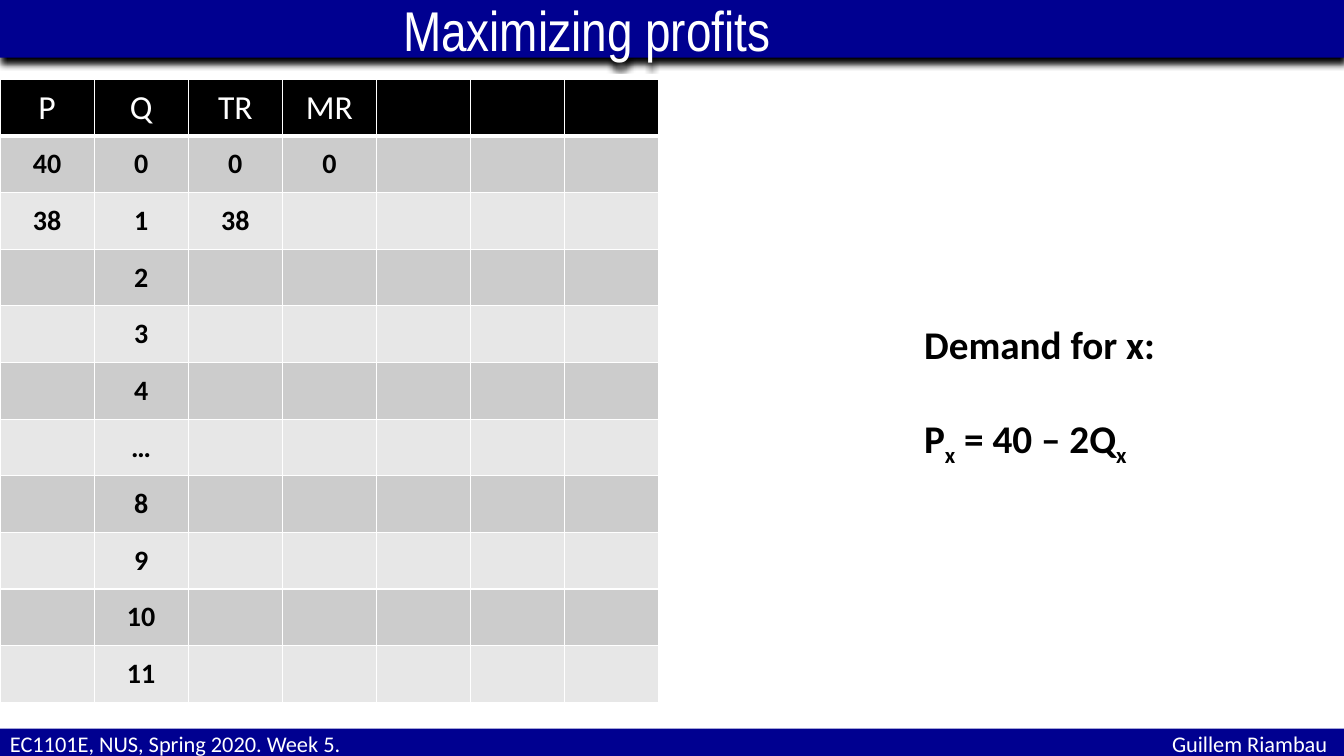
import pptx
import pptx.dml.color
import pptx.enum.shapes
import pptx.enum.text
import pptx.oxml
import pptx.oxml.ns
import pptx.util
from pptx.util import Cm

NAVY = pptx.dml.color.RGBColor(0x00, 0x00, 0x90)
WHITE = pptx.dml.color.RGBColor(0xFF, 0xFF, 0xFF)
BLACK = pptx.dml.color.RGBColor(0x00, 0x00, 0x00)
DARK_BAND = pptx.dml.color.RGBColor(0xCC, 0xCC, 0xCC)
LIGHT_BAND = pptx.dml.color.RGBColor(0xE7, 0xE7, 0xE7)

SLIDE_WIDTH = Cm(33.87)
HEADERS = ["P", "Q", "TR", "MR", "", "", ""]
QUANTITIES = ["0", "1", "2", "3", "4", "…", "8", "9", "10", "11"]
KNOWN_VALUES = {"0": ("40", "0", "0"), "1": ("38", "38", "")}


def xml_element(markup):
    namespace = pptx.oxml.ns.nsdecls("a")
    return pptx.oxml.parse_xml(markup.replace(">", f" {namespace}>", 1))


def format_font(paragraph, name, size, color, bold=False):
    paragraph.font.name = name
    paragraph.font.size = pptx.util.Pt(size)
    paragraph.font.color.rgb = color
    paragraph.font.bold = bold


def format_bar(shape, top, height, text, font_name, size):
    shape.left, shape.top, shape.width, shape.height = 0, top, SLIDE_WIDTH, height
    shape.fill.solid()
    shape.fill.fore_color.rgb = NAVY
    shape.line.fill.background()
    shape.shadow.inherit = False
    effects = shape._element.spPr.find(pptx.oxml.ns.qn("a:effectLst"))
    effects.append(xml_element(
        '<a:outerShdw blurRad="50800" dist="50800" dir="5400000" rotWithShape="0">'
        '<a:srgbClr val="000000"/></a:outerShdw>'))
    frame = shape.text_frame
    frame.word_wrap = True
    frame.auto_size = pptx.enum.text.MSO_AUTO_SIZE.NONE
    frame.vertical_anchor = pptx.enum.text.MSO_ANCHOR.MIDDLE
    paragraph = frame.paragraphs[0]
    paragraph.text = text
    paragraph.alignment = pptx.enum.text.PP_ALIGN.LEFT
    format_font(paragraph, font_name, size, WHITE)


def add_title(slide):
    title = slide.shapes.title
    format_bar(title, 0, Cm(1.45), "Maximizing profits", "Arial Narrow", 40)
    title.text_frame.margin_left = Cm(10.16)


def add_footer(slide):
    footer = slide.shapes.add_shape(
        pptx.enum.shapes.MSO_SHAPE.RECTANGLE, 0, 0, SLIDE_WIDTH, Cm(0.76))
    format_bar(footer, Cm(18.36), Cm(0.76),
               "EC1101E, NUS, Spring 2020. Week 5.\tGuillem Riambau", "Calibri", 16)
    properties = footer.text_frame.paragraphs[0]._p.get_or_add_pPr()
    tabs = xml_element(f'<a:tabLst><a:tab pos="{Cm(33.2)}" algn="r"/></a:tabLst>')
    properties.insert_element_before(tabs, "a:defRPr", "a:extLst")


def format_cell(cell, text, fill, size, color, bold, bottom_width):
    cell_properties = cell._tc.get_or_add_tcPr()
    for side, width in (("L", 1), ("R", 1), ("T", 1), ("B", bottom_width)):
        cell_properties.append(xml_element(
            f'<a:ln{side} w="{pptx.util.Pt(width)}"><a:solidFill>'
            f'<a:srgbClr val="{WHITE}"/></a:solidFill></a:ln{side}>'))
    cell.fill.solid()
    cell.fill.fore_color.rgb = fill
    cell.vertical_anchor = pptx.enum.text.MSO_ANCHOR.MIDDLE
    paragraph = cell.text_frame.paragraphs[0]
    paragraph.text = text
    paragraph.alignment = pptx.enum.text.PP_ALIGN.CENTER
    format_font(paragraph, "Calibri", size, color, bold)


def add_revenue_table(slide):
    rows = [HEADERS]
    for quantity in QUANTITIES:
        price, total, marginal = KNOWN_VALUES.get(quantity, ("", "", ""))
        rows.append([price, quantity, total, marginal, "", "", ""])
    table = slide.shapes.add_table(
        len(rows), len(HEADERS), 0, Cm(2), Cm(16.61), Cm(15.7)).table
    table.first_row = False
    table.horz_banding = False
    for row_index, values in enumerate(rows):
        if row_index == 0:
            style = (BLACK, 24, WHITE, False, 3)
        else:
            band = DARK_BAND if row_index % 2 else LIGHT_BAND
            style = (band, 20, BLACK, True, 1)
        for column_index, text in enumerate(values):
            format_cell(table.cell(row_index, column_index), text, *style)


def add_demand(slide):
    frame = slide.shapes.add_textbox(Cm(23.04), Cm(6.73), Cm(7.32), Cm(7.01)).text_frame
    frame.word_wrap = True
    frame.margin_top = Cm(1.33)
    heading = frame.paragraphs[0]
    heading.text = "Demand for x:"
    formula = frame.add_paragraph()
    formula.space_before = pptx.util.Pt(34)
    for text, is_subscript in (("P", False), ("x", True), (" = 40 – 2Q", False), ("x", True)):
        run = formula.add_run()
        run.text = text
        if is_subscript:
            run.font._element.set("baseline", "-25000")
    for paragraph in frame.paragraphs:
        format_font(paragraph, "Calibri", 28, BLACK, True)


def main():
    presentation = pptx.Presentation()
    presentation.slide_width = SLIDE_WIDTH
    presentation.slide_height = Cm(19.05)
    slide = presentation.slides.add_slide(presentation.slide_layouts.get_by_name("Title Only"))
    add_footer(slide)
    add_title(slide)
    add_revenue_table(slide)
    add_demand(slide)
    presentation.save("out.pptx")


if __name__ == "__main__":
    main()
